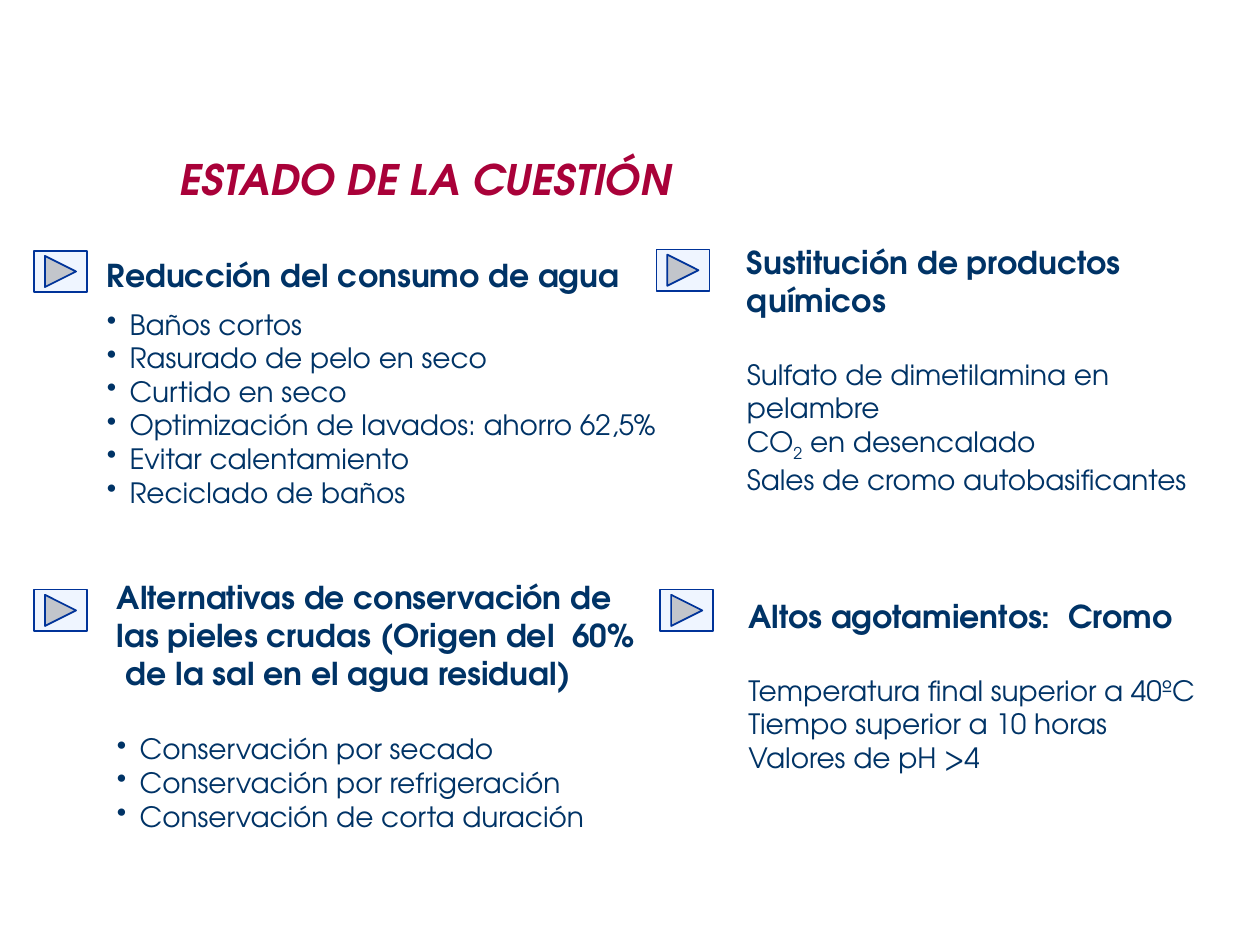
from lxml import etree
from pptx import Presentation
from pptx.dml.color import RGBColor
from pptx.enum.shapes import MSO_SHAPE as Shape
from pptx.enum.text import MSO_ANCHOR as Anchor
from pptx.oxml.ns import qn
from pptx.util import Inches, Pt


def color(value):
    return RGBColor.from_string(value)


class SlideBuilder:
    FONT = "TeX Gyre Adventor"
    NAVY, CRIMSON = "003366", "A90139"
    BUTTON_FILL, BUTTON_LINE = "E1ECFF", "003399"
    HEADING_SIZE, BODY_SIZE = 18, 16
    BULLET_INDENT = Inches(0.18)

    def __init__(self, slide):
        self.slide = slide

    def text_box(self, left, top, width, height, anchor=Anchor.MIDDLE):
        box = self.slide.shapes.add_textbox(
            Inches(left), Inches(top), Inches(width), Inches(height))
        frame = box.text_frame
        frame.word_wrap = True
        frame.vertical_anchor = anchor
        return frame

    def run(self, paragraph, text, size, ink=NAVY, bold=False, italic=False):
        run = paragraph.add_run()
        run.text = text
        font = run.font
        font.name, font.size = self.FONT, Pt(size)
        font.bold, font.italic = bold, italic
        font.color.rgb = color(ink)
        return run

    def bullet(self, paragraph):
        properties = paragraph._p.get_or_add_pPr()
        properties.set("marL", str(self.BULLET_INDENT))
        properties.set("indent", str(-self.BULLET_INDENT))
        etree.SubElement(properties, qn("a:buChar")).set("char", "•")

    def title(self, text, *place):
        frame = self.text_box(*place, anchor=Anchor.TOP)
        self.run(frame.paragraphs[0], text, 24, self.CRIMSON, True, True)

    def topic(self, place, heading, items, bulleted=False, gap=0, spacing=1):
        """Heading and items; an item may be a (base, subscript, rest) tuple."""
        frame = self.text_box(*place)
        paragraph = frame.paragraphs[0]
        paragraph.line_spacing = spacing
        self.run(paragraph, heading, self.HEADING_SIZE, bold=True)
        for index, item in enumerate(items):
            paragraph = frame.add_paragraph()
            if index == 0:
                paragraph.space_before = Pt(gap)
                paragraph.line_spacing = spacing
            if bulleted:
                self.bullet(paragraph)
            parts = (item,) if isinstance(item, str) else item
            for position, part in enumerate(parts):
                run = self.run(paragraph, part, self.BODY_SIZE)
                if position == 1:
                    run.font._element.set("baseline", "-25000")

    def button(self, left, top):
        shape = self.slide.shapes.add_shape(
            Shape.ACTION_BUTTON_FORWARD_OR_NEXT,
            Inches(left), Inches(top), Inches(0.42), Inches(0.33))
        shape.shadow.inherit = False
        shape.fill.solid()
        shape.fill.fore_color.rgb = color(self.BUTTON_FILL)
        fill_color = shape.fill._xPr.find(qn("a:solidFill"))[0]
        etree.SubElement(fill_color, qn("a:alpha")).set("val", "50000")
        shape.line.color.rgb = color(self.BUTTON_LINE)
        shape.line.width = Pt(1)


def main():
    presentation = Presentation()
    presentation.slide_width, presentation.slide_height = Inches(10), Inches(7.5)
    slide = presentation.slides.add_slide(presentation.slide_layouts[6])
    builder = SlideBuilder(slide)

    # Title
    builder.title("ESTADO DE LA CUESTIÓN", 1.33, 1.17, 6.5, 0.5)

    # Right column
    builder.topic(
        (5.83, 1.9, 3.98, 2.07), "Sustitución de productos químicos",
        ["Sulfato de dimetilamina en pelambre",
         ("CO", "2", " en desencalado"),
         "Sales de cromo autobasificantes"], gap=22)
    builder.topic(
        (5.84, 4.69, 3.81, 1.5), "Altos agotamientos:  Cromo",
        ["Temperatura final superior a 40ºC",
         "Tiempo superior a 10 horas",
         "Valores de pH >4"], gap=22)

    # Left column
    builder.topic(
        (0.75, 1.86, 4.81, 2.23), "Reducción del consumo de agua",
        ["Baños cortos", "Rasurado de pelo en seco", "Curtido en seco",
         "Optimización de lavados: ahorro 62,5%", "Evitar calentamiento",
         "Reciclado de baños"], bulleted=True, spacing=1.4)
    builder.topic(
        (0.83, 4.53, 4.33, 2.14),
        "Alternativas de conservación de las pieles crudas "
        "(Origen del  60%  de la sal en el agua residual)",
        ["Conservación por secado", "Conservación por refrigeración",
         "Conservación de corta duración"], bulleted=True, gap=23)

    # Forward buttons beside each topic
    for left, top in ((0.27, 1.99), (5.21, 1.98), (0.27, 4.68), (5.24, 4.68)):
        builder.button(left, top)

    presentation.save("out.pptx")


if __name__ == "__main__":
    main()
